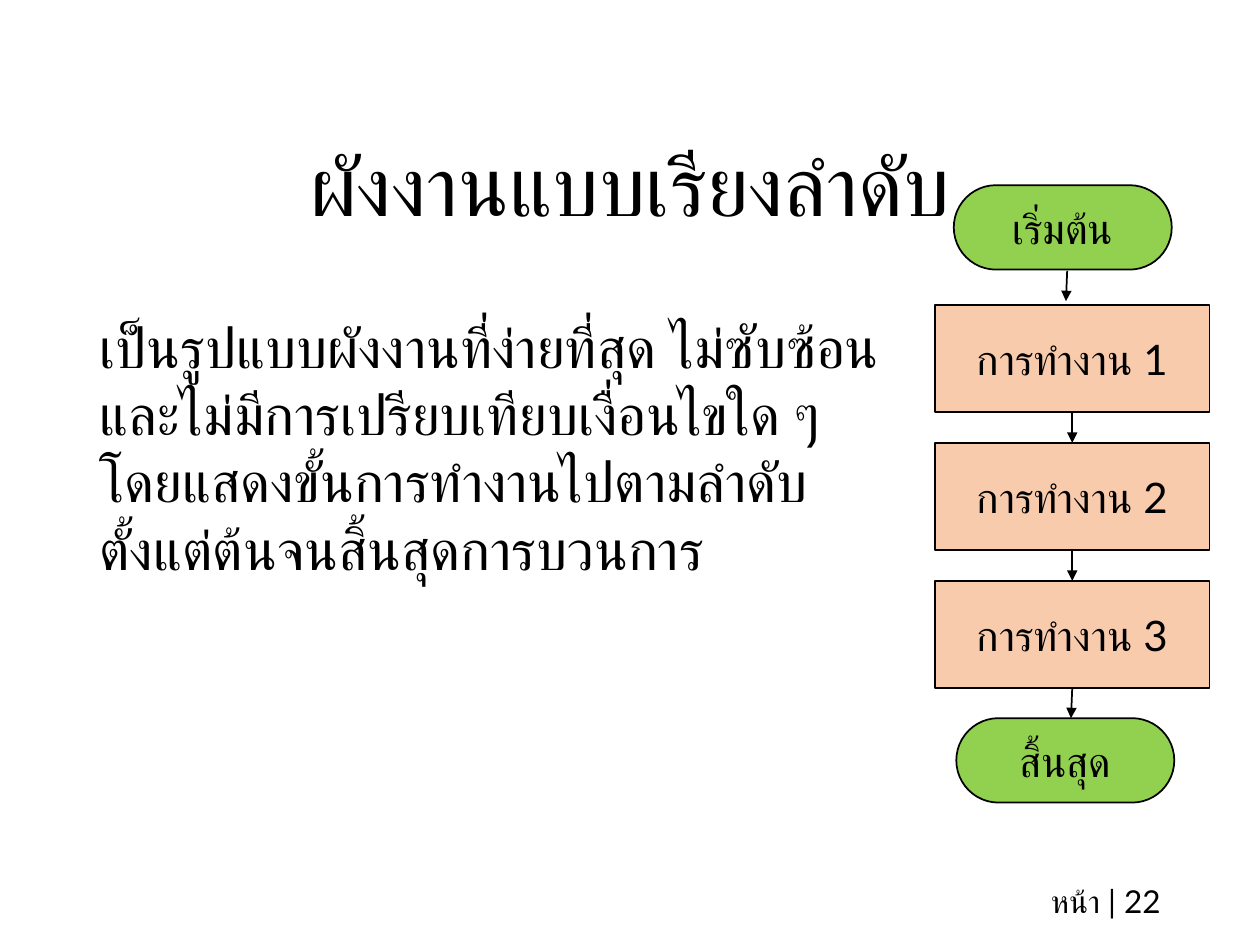
import pptx
import pptx.util
import pptx.dml.color
import pptx.enum.lang
import pptx.enum.shapes
import pptx.enum.text
import pptx.oxml

Inches = pptx.util.Inches
Align = pptx.enum.text.PP_ALIGN
Anchor = pptx.enum.text.MSO_ANCHOR
Shape = pptx.enum.shapes.MSO_SHAPE

TITLE = "ผังงานแบบเรียงลำดับ"
BODY = (
    "เป็นรูปแบบผังงานที่ง่ายที่สุด ไม่ซับซ้อน และไม่มีการเปรียบเทียบเงื่อนไขใด ๆ "
    "โดยแสดงขั้นการทำงานไปตามลำดับตั้งแต่ต้นจนสิ้นสุดการบวนการ"
)
PAGE_LABEL = "หน้า | 22"
START = ("เริ่มต้น", 7.57, 1.47)
END = ("สิ้นสุด", 7.59, 5.7)
STEPS = ["การทำงาน 1", "การทำงาน 2", "การทำงาน 3"]

STEP_LEFT, STEP_TOP, STEP_PITCH = 7.42, 2.42, 1.095
STEP_SIZE = (2.18, 0.85)
TERMINAL_SIZE = (1.73, 0.67)
START_ARROW = ((8.47, 2.15), (8.46, 2.39))
END_ARROW = ((8.51, 5.46), (8.5, 5.7))
BOTTOM, TOP = 2, 0

THEME = {
    "font": "Lato",
    "ink": "000000",
    "terminal": "92D050",
    "step": "F8CBAD",
    "line": 1,
    "title": 48,
    "body": 32,
    "box": 24,
    "page": 18,
}


def rgb(name):
    return pptx.dml.color.RGBColor.from_string(THEME[name])


def drawing_element(tag, **attributes):
    element = pptx.oxml.parse_xml(
        f'<a:{tag} xmlns:a="http://schemas.openxmlformats.org/drawingml/2006/main"/>'
    )
    for key, value in attributes.items():
        element.set(key, value)
    return element


def place(box, left, top, width, height):
    box.left, box.top = Inches(left), Inches(top)
    box.width, box.height = Inches(width), Inches(height)


def write(box, text, size, align, anchor=Anchor.MIDDLE, spacing=1.0):
    frame = box.text_frame
    frame.word_wrap = True
    frame.auto_size = pptx.enum.text.MSO_AUTO_SIZE.NONE
    frame.vertical_anchor = anchor
    para = frame.paragraphs[0]
    para.alignment = align
    para.line_spacing = spacing
    para.space_before = pptx.util.Pt(0)
    span = para.add_run()
    span.text = text
    span.font.name = THEME["font"]
    span.font.size = pptx.util.Pt(THEME[size])
    span.font.color.rgb = rgb("ink")
    span.font.language_id = pptx.enum.lang.MSO_LANGUAGE_ID.THAI
    # Thai glyphs take the complex-script font
    span.font._element.append(drawing_element("cs", typeface=THEME["font"]))
    return para


def add_box(page, kind, text, left, top, size, fill):
    box = page.shapes.add_shape(kind, *map(Inches, (left, top, *size)))
    box.shadow.inherit = False
    box.fill.solid()
    box.fill.fore_color.rgb = rgb(fill)
    box.line.color.rgb = rgb("ink")
    box.line.width = pptx.util.Pt(THEME["line"])
    write(box, text, "box", Align.CENTER)
    return box


def add_terminal(page, text, left, top):
    box = add_box(page, Shape.ROUNDED_RECTANGLE, text, left, top, TERMINAL_SIZE, "terminal")
    box.adjustments[0] = 0.5


def add_arrow(page, start=(0, 0), end=(0, 0)):
    arrow = page.shapes.add_connector(
        pptx.enum.shapes.MSO_CONNECTOR.STRAIGHT, *map(Inches, (*start, *end))
    )
    arrow.line.color.rgb = rgb("ink")
    arrow.line.width = pptx.util.Pt(THEME["line"])
    arrow.line._get_or_add_ln().append(drawing_element("tailEnd", type="triangle"))
    arrow._element.spPr.append(drawing_element("effectLst"))
    return arrow


def add_flowchart(page):
    add_terminal(page, *START)
    add_terminal(page, *END)
    steps = [
        add_box(page, Shape.RECTANGLE, text, STEP_LEFT, STEP_TOP + i * STEP_PITCH,
                STEP_SIZE, "step")
        for i, text in enumerate(STEPS)
    ]
    add_arrow(page, *START_ARROW)
    for upper, lower in zip(steps, steps[1:]):
        arrow = add_arrow(page)
        arrow.begin_connect(upper, BOTTOM)
        arrow.end_connect(lower, TOP)
    add_arrow(page, *END_ARROW).begin_connect(steps[-1], BOTTOM)


def main():
    deck = pptx.Presentation()
    deck.slide_width, deck.slide_height = Inches(10), Inches(7.5)
    page = deck.slides.add_slide(deck.slide_layouts[1])

    title, body = page.placeholders
    place(title, 0.69, 0.78, 8.62, 1.45)
    write(title, TITLE, "title", Align.CENTER, spacing=0.9)
    place(body, 0.69, 2.43, 6.38, 4.32)
    body.text_frame.margin_right = Inches(0.06)
    para = write(body, BODY, "body", Align.LEFT, Anchor.TOP)
    properties = para._p.get_or_add_pPr()
    properties.set("marL", "0")
    properties.set("indent", "0")
    properties.append(drawing_element("buNone"))

    add_flowchart(page)
    label = page.shapes.add_textbox(*map(Inches, (7.06, 6.95, 2.25, 0.4)))
    write(label, PAGE_LABEL, "page", Align.RIGHT)
    deck.save("out.pptx")


if __name__ == "__main__":
    main()
